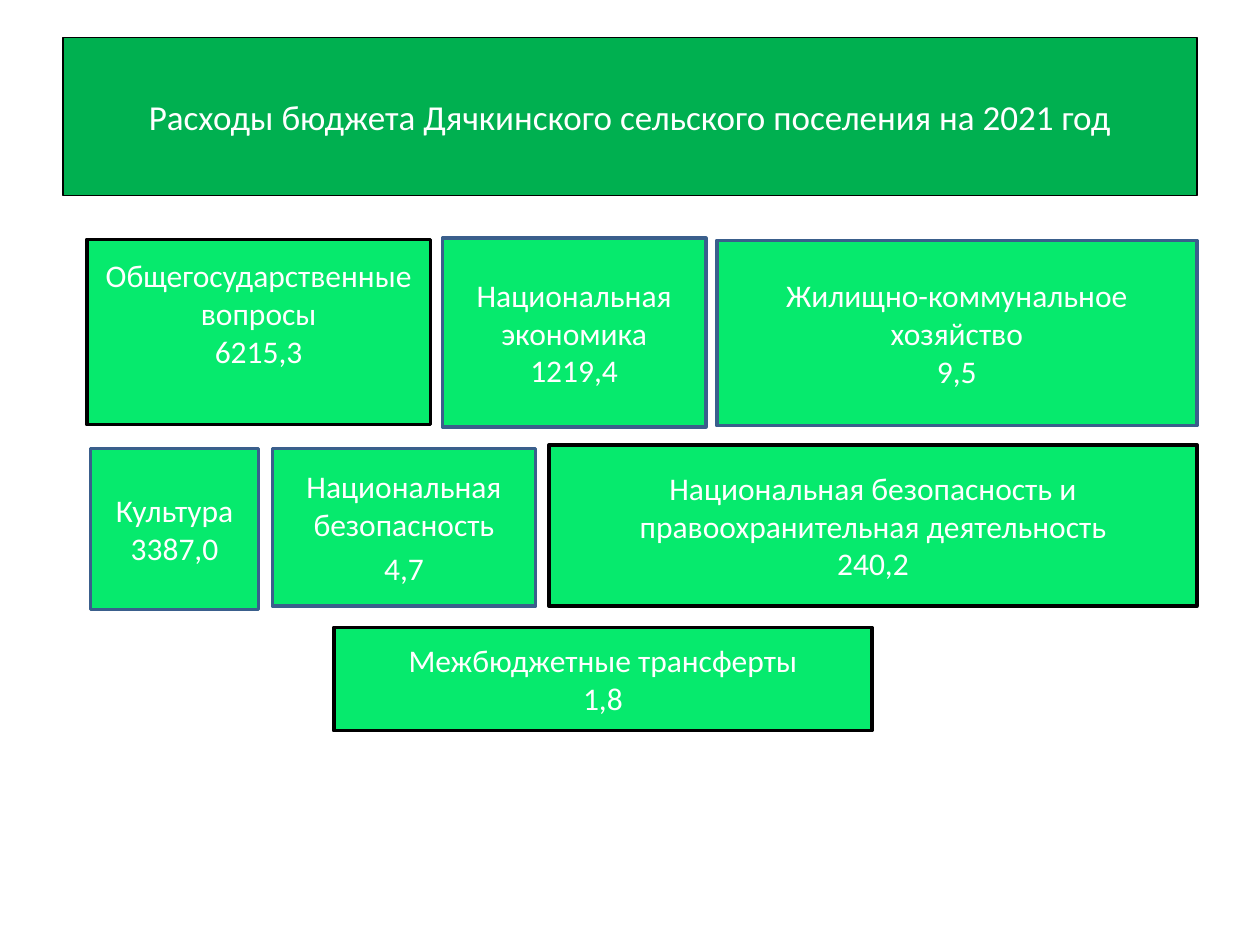
from pptx import Presentation
from pptx.dml.color import RGBColor
from pptx.enum.shapes import MSO_SHAPE
from pptx.enum.text import MSO_ANCHOR, PP_ALIGN
from pptx.util import Cm, Pt

FONT = "Calibri"
WHITE = "FFFFFF"
BLACK = "000000"
BLUE = "3A5F8C"
TITLE_GREEN = "00B050"
BOX_GREEN = "06EA6D"

EXPENSES = [
    ("Общегосударственные вопросы", "6215,3", (1.75, 4.83, 6.93, 3.73), BLACK, {"bottom_inset": 0.9}),
    ("Национальная безопасность и правоохранительная деятельность", "240,2",
     (11.07, 8.97, 13.06, 3.25), BLACK, {}),
    ("Национальная экономика", "1219,4", (8.92, 4.8, 5.31, 3.81), BLUE, {}),
    ("Жилищно-коммунальное хозяйство", "9,5", (14.45, 4.85, 9.68, 3.73), BLUE, {}),
    ("Культура", "3387,0", (1.83, 9.04, 3.38, 3.25), BLUE, {}),
    ("Межбюджетные трансферты", "1,8", (6.73, 12.65, 10.85, 2.08), BLACK, {}),
    ("Национальная безопасность", "4,7", (5.49, 9.04, 5.31, 3.18), BLUE, {"space_before": 3.6}),
]


def color(value):
    return RGBColor.from_string(value)


def write_text(shape, lines, size=18, font_color=WHITE, space_before=0, bottom_inset=0.13):
    frame = shape.text_frame
    frame.word_wrap = True
    frame.vertical_anchor = MSO_ANCHOR.MIDDLE
    frame.margin_bottom = Cm(bottom_inset)
    frame.text = "\n".join(lines)
    for paragraph in frame.paragraphs:
        paragraph.alignment = PP_ALIGN.CENTER
        paragraph.space_before = Pt(space_before)
        for run in paragraph.runs:
            run.font.name = FONT
            run.font.size = Pt(size)
            run.font.color.rgb = color(font_color)


def add_box(slide, position, fill, line, line_width):
    shape = slide.shapes.add_shape(MSO_SHAPE.RECTANGLE, *map(Cm, position))
    shape.shadow.inherit = False
    shape.fill.solid()
    shape.fill.fore_color.rgb = color(fill)
    shape.line.color.rgb = color(line)
    shape.line.width = Pt(line_width)
    return shape


def main():
    presentation = Presentation()
    presentation.slide_width = Cm(25.4)
    presentation.slide_height = Cm(19.05)
    slide = presentation.slides.add_slide(presentation.slide_layouts[6])

    title = add_box(slide, (1.27, 0.76, 22.86, 3.18), TITLE_GREEN, BLACK, 0.75)
    write_text(title, ["Расходы бюджета Дячкинского сельского поселения на 2021 год"], size=20)

    for name, amount, position, line, text_format in EXPENSES:
        box = add_box(slide, position, BOX_GREEN, line, 2)
        write_text(box, [name, amount], **text_format)

    presentation.save("out.pptx")


if __name__ == "__main__":
    main()
